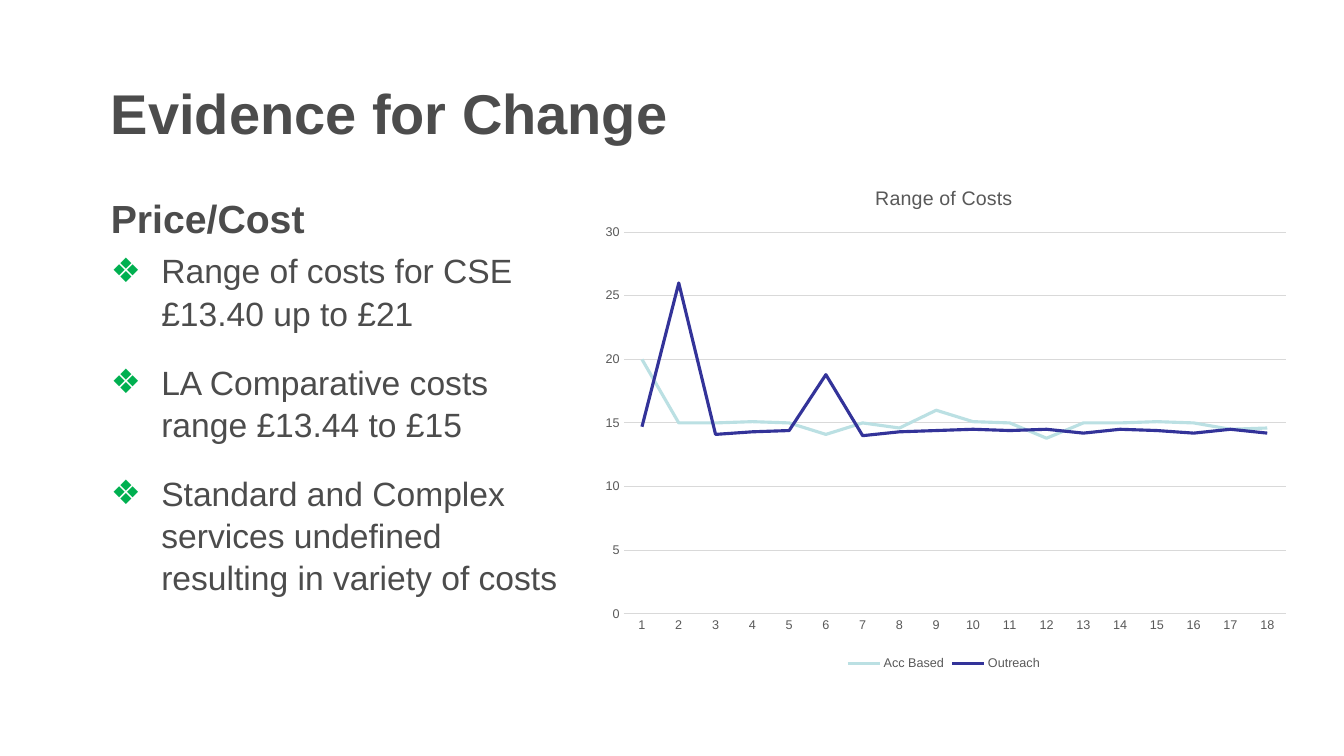
from lxml import etree
from pptx import Presentation
from pptx import util as u
from pptx.chart.data import CategoryChartData
from pptx.dml.color import RGBColor
from pptx.enum import chart as ch, text
from pptx.oxml.ns import qn

EMU_PER_PX = 914400 / 100.8


def px(length):
    return u.Emu(round(length * EMU_PER_PX))


def rgb(hex_code):
    return RGBColor.from_string(hex_code)


class SlideBuilder:
    font = "Arial"
    ink = "4C4C4C"
    bullet_green = "00B050"
    chart_text = "595959"
    rule = "D9D9D9"

    def __init__(self, slide):
        self.slide = slide

    def style(self, font, size, color, bold=False):
        font.name = self.font
        font.size = u.Pt(size)
        font.bold = bold
        font.color.rgb = rgb(color)

    def text_box(self, left, top, width, height, inset_top):
        frame = self.slide.shapes.add_textbox(
            px(left), px(top), px(width), px(height)).text_frame
        frame.word_wrap = True
        frame.vertical_anchor = text.MSO_ANCHOR.TOP
        frame.margin_top = px(inset_top)
        return frame

    def add_words(self, paragraph, words, size, bold=False):
        run = paragraph.add_run()
        run.text = words
        self.style(run.font, size, self.ink, bold)

    def bullet(self, frame, words, size, space_before):
        item = frame.add_paragraph()
        props = item._p.get_or_add_pPr()
        props.set("marL", str(u.Inches(0.5)))
        props.set("indent", str(-u.Inches(0.5)))
        color = etree.SubElement(props, qn("a:buClr"))
        etree.SubElement(color, qn("a:srgbClr"), val=self.bullet_green)
        etree.SubElement(props, qn("a:buFont"), typeface=self.font)
        etree.SubElement(props, qn("a:buChar"), char="❖")
        item.space_before = u.Pt(space_before)
        item.line_spacing = 1.05
        self.add_words(item, words, size)

    def line_chart(self, left, top, width, height, title, categories, series, plot):
        data = CategoryChartData()
        data.categories = categories
        for name, _, values in series:
            data.add_series(name, values)
        chart = self.slide.shapes.add_chart(
            ch.XL_CHART_TYPE.LINE, px(left), px(top), px(width), px(height), data).chart
        self.style(chart.font, 10, "000000")

        # Title and legend
        heading = chart.chart_title.text_frame.paragraphs[0].add_run()
        heading.text = title
        self.style(heading.font, 14, self.chart_text)
        chart.has_legend = True
        chart.legend.position = ch.XL_LEGEND_POSITION.BOTTOM
        chart.legend.include_in_layout = False
        self.style(chart.legend.font, 9, self.chart_text)

        # Axes
        for axis in (chart.category_axis, chart.value_axis):
            axis.major_tick_mark = axis.minor_tick_mark = ch.XL_TICK_MARK.NONE
            self.style(axis.tick_labels.font, 9, self.chart_text)
        costs = chart.value_axis
        costs.minimum_scale, costs.maximum_scale, costs.major_unit = 0, 30, 5
        costs.format.line.fill.background()
        for line in (chart.category_axis.format.line, costs.major_gridlines.format.line):
            line.color.rgb = rgb(self.rule)
            line.width = u.Pt(0.75)

        # Lines
        chart.plots[0].vary_by_categories = False
        for drawn, (_, color, _) in zip(chart.plots[0].series, series):
            drawn.smooth = False
            drawn.marker.style = ch.XL_MARKER_STYLE.NONE
            drawn.format.line.color.rgb = rgb(color)
            drawn.format.line.width = u.Pt(2.25)

        # Plot area, as fractions of the chart
        area = chart._chartSpace.chart.plotArea
        for old in area.findall(qn("c:layout")):
            area.remove(old)
        layout = etree.Element(qn("c:layout"))
        area.insert(0, layout)
        manual = etree.SubElement(layout, qn("c:manualLayout"))
        settings = [("layoutTarget", "inner"), ("xMode", "edge"), ("yMode", "edge")]
        for tag, value in settings + list(zip("xywh", plot)):
            etree.SubElement(manual, qn(f"c:{tag}"), val=str(value))


def main():
    deck = Presentation()
    deck.slide_width, deck.slide_height = px(1344), px(756)
    page = SlideBuilder(deck.slides.add_slide(deck.slide_layouts[6]))

    # Title
    title = page.text_box(101, 68, 1199, 126, inset_top=11)
    page.add_words(title.paragraphs[0], "Evidence for Change", 40, bold=True)

    # Price and cost points
    points = page.text_box(101, 185, 470, 462, inset_top=7)
    points.paragraphs[0].line_spacing = 1.05
    page.add_words(points.paragraphs[0], "Price/Cost", 28, bold=True)
    findings = [
        ("Range of costs for CSE £13.40 up to £21", 5),
        ("LA Comparative costs range £13.44 to £15", 19),
        ("Standard and Complex services undefined resulting in variety of costs", 19),
    ]
    for finding, gap in findings:
        page.bullet(points, finding, 24, gap)

    # Range of costs
    services = [
        ("Acc Based", "BBE0E3", [20, 15, 15, 15.1, 15, 14.1, 15, 14.6, 16,
                                 15.1, 15, 13.8, 15, 15, 15.1, 15, 14.5, 14.6]),
        ("Outreach", "333399", [14.7, 26, 14.1, 14.3, 14.4, 18.8, 14, 14.3, 14.4,
                                14.5, 14.4, 14.5, 14.2, 14.5, 14.4, 14.2, 14.5, 14.2]),
    ]
    page.line_chart(588, 166, 712, 509, "Range of Costs",
                    [str(number) for number in range(1, 19)], services,
                    plot=(0.05, 0.13, 0.93, 0.75))

    deck.save("out.pptx")


if __name__ == "__main__":
    main()
